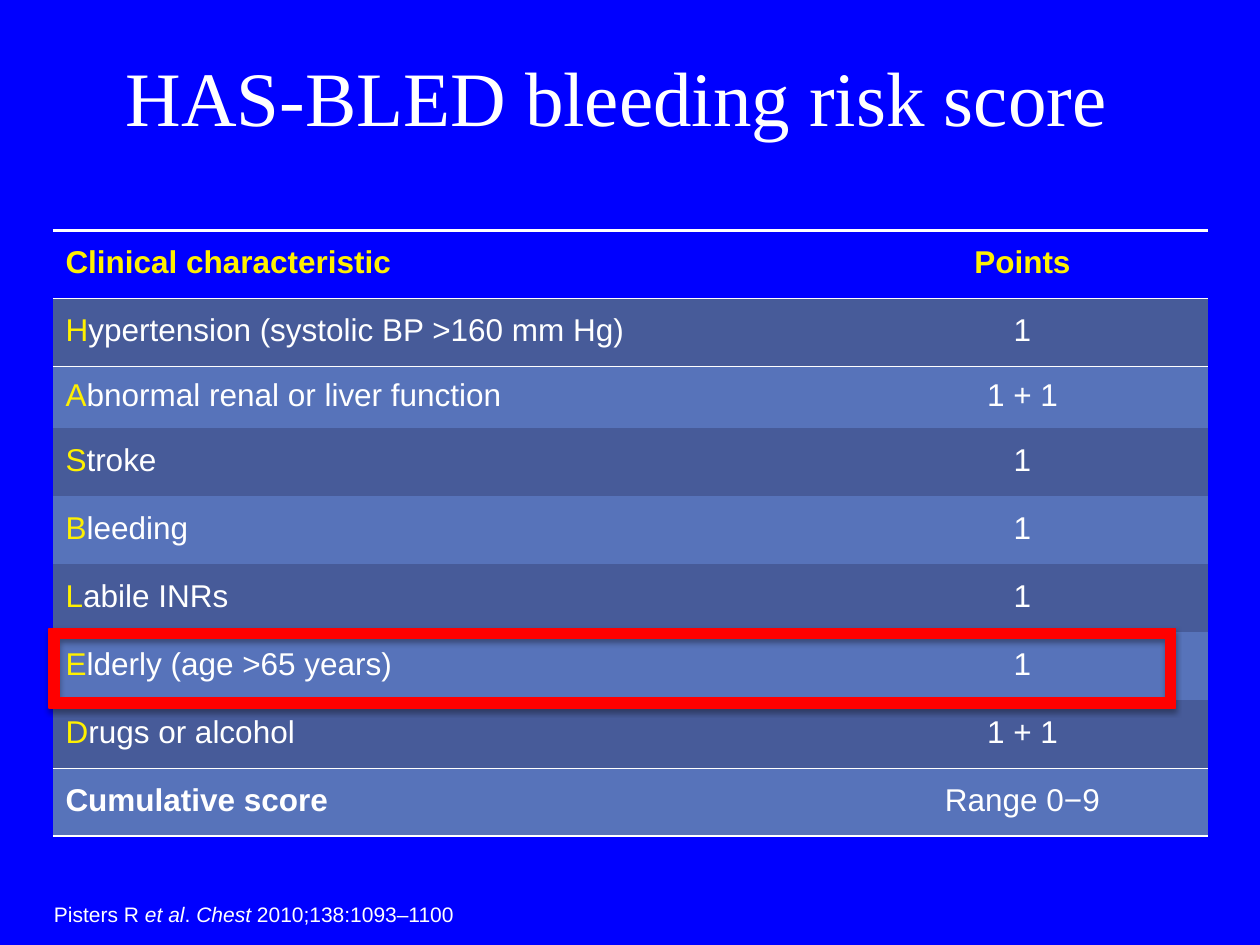
from dataclasses import dataclass

from lxml import etree
from pptx import Presentation
from pptx import util as u
from pptx.dml.color import RGBColor
from pptx.enum import shapes, text
from pptx.oxml import ns

TITLE = "HAS-BLED bleeding risk score"
HEADER = ("Clinical characteristic", "Points")
FACTORS = [
    ("Hypertension (systolic BP >160 mm Hg)", "1"),
    ("Abnormal renal or liver function", "1 + 1"),
    ("Stroke", "1"),
    ("Bleeding", "1"),
    ("Labile INRs", "1"),
    ("Elderly (age >65 years)", "1"),
    ("Drugs or alcohol", "1 + 1"),
]
TOTAL = ("Cumulative score", "Range 0−9")
CITATION = [("Pisters R ", False), ("et al", True), (". ", False),
            ("Chest", True), (" 2010;138:1093–1100", False)]

TITLE_AREA = (0.31, 0.05, 9.17, 1.42)
TABLE_ORIGIN = (0.42, 1.83)
COLUMNS = (6.22, 2.95)
ROW_HEIGHT, SHORT_ROW_HEIGHT, SHORT_ROW = 0.54, 0.49, 2
HIGHLIGHT_AREA = (0.39, 4.99, 8.94, 0.63)
CITATION_AREA = (0.33, 7.11, 3.41, 0.3)


@dataclass(frozen=True)
class Theme:
    background: str = "0000FF"
    body: str = "FFFFFF"
    accent: str = "FFF000"
    bands: tuple = ("475B99", "5773BA")
    highlight: str = "FF0000"
    shadow: str = "000000"
    title_font: str = "Times New Roman"
    body_font: str = "Arial"
    title_size: int = 44
    table_size: int = 18
    citation_size: int = 12
    rule: float = 1
    outer_rule: float = 1.5


THEME = Theme()


def inches(area):
    return [u.Inches(length) for length in area]


def paint(fill, color):
    fill.solid()
    fill.fore_color.rgb = RGBColor.from_string(color)


def style(span, size, color=THEME.body, name=THEME.body_font, bold=False, italic=False):
    font = span.font
    font.size, font.name, font.bold, font.italic = u.Pt(size), name, bold, italic
    font.color.rgb = RGBColor.from_string(color)


def add_rule(cell, side, width):
    line = etree.SubElement(cell._tc.get_or_add_tcPr(), ns.qn(f"a:ln{side}"),
                            w=str(u.Pt(width)))
    fill = etree.SubElement(line, ns.qn("a:solidFill"))
    etree.SubElement(fill, ns.qn("a:srgbClr"), val=THEME.body)


def add_shadow(shape):
    effects = etree.SubElement(shape._element.spPr, ns.qn("a:effectLst"))
    shadow = etree.SubElement(effects, ns.qn("a:outerShdw"), blurRad=str(u.Pt(3.1)),
                              dist=str(u.Pt(1.8)), dir="5400000", rotWithShape="0")
    color = etree.SubElement(shadow, ns.qn("a:srgbClr"), val=THEME.shadow)
    etree.SubElement(color, ns.qn("a:alpha"), val="35000")


def add_title(page):
    frame = page.shapes.add_textbox(*inches(TITLE_AREA)).text_frame
    frame.word_wrap = True
    frame.vertical_anchor = text.MSO_ANCHOR.MIDDLE
    frame.text = TITLE
    para = frame.paragraphs[0]
    para.alignment = text.PP_ALIGN.CENTER
    style(para.runs[0], THEME.title_size, name=THEME.title_font)


def fill_cell(cell, pieces, centered):
    cell.vertical_anchor = text.MSO_ANCHOR.MIDDLE
    para = cell.text_frame.paragraphs[0]
    para.line_spacing = 0.85
    para.alignment = text.PP_ALIGN.CENTER if centered else text.PP_ALIGN.LEFT
    for words, color, bold in pieces:
        span = para.add_run()
        span.text = words
        style(span, THEME.table_size, color, bold=bold)


def add_score_table(page):
    rows = [HEADER, *FACTORS, TOTAL]
    last = len(rows) - 1
    heights = [SHORT_ROW_HEIGHT if i == SHORT_ROW else ROW_HEIGHT for i in range(len(rows))]
    area = inches((*TABLE_ORIGIN, sum(COLUMNS), sum(heights)))
    table = page.shapes.add_table(len(rows), len(COLUMNS), *area).table
    table.first_row = table.horz_banding = False
    style_id = table._tbl.tblPr.find(ns.qn("a:tableStyleId"))
    style_id.text = "{2D5ABB26-0587-4C30-8999-92F81FD0307C}"
    for column, width in zip(table.columns, COLUMNS):
        column.width = u.Inches(width)
    for row, height in zip(table.rows, heights):
        row.height = u.Inches(height)

    rules = {
        0: (("T", THEME.outer_rule), ("B", THEME.rule)),
        1: (("T", THEME.rule),),
        last - 1: (("B", THEME.rule),),
        last: (("T", THEME.rule), ("B", THEME.outer_rule)),
    }
    for i, row in enumerate(rows):
        for j, words in enumerate(row):
            cell = table.cell(i, j)
            if i == 0:
                pieces = [(words, THEME.accent, True)]
            elif j == 0 and i < last:
                pieces = [(words[0], THEME.accent, False), (words[1:], THEME.body, False)]
            else:
                pieces = [(words, THEME.body, j == 0)]
            fill_cell(cell, pieces, centered=j > 0)
            for side, width in rules.get(i, ()):
                add_rule(cell, side, width)
            if i == 0:
                cell.fill.background()
            else:
                paint(cell.fill, THEME.bands[(i - 1) % 2])


def add_citation(page):
    frame = page.shapes.add_textbox(*inches(CITATION_AREA)).text_frame
    frame.word_wrap = False
    frame.auto_size = text.MSO_AUTO_SIZE.SHAPE_TO_FIT_TEXT
    for words, italic in CITATION:
        span = frame.paragraphs[0].add_run()
        span.text = words
        style(span, THEME.citation_size, italic=italic)


def add_highlight(page):
    box = page.shapes.add_shape(shapes.MSO_SHAPE.FRAME, *inches(HIGHLIGHT_AREA))
    paint(box.fill, THEME.highlight)
    paint(box.line.fill, THEME.highlight)
    box.line.width = u.Pt(THEME.rule)
    add_shadow(box)


def main():
    deck = Presentation()
    deck.slide_width, deck.slide_height = inches((10, 7.5))
    page = deck.slides.add_slide(deck.slide_layouts[6])
    paint(page.background.fill, THEME.background)
    add_title(page)
    add_score_table(page)
    add_citation(page)
    add_highlight(page)
    deck.save("out.pptx")


if __name__ == "__main__":
    main()
